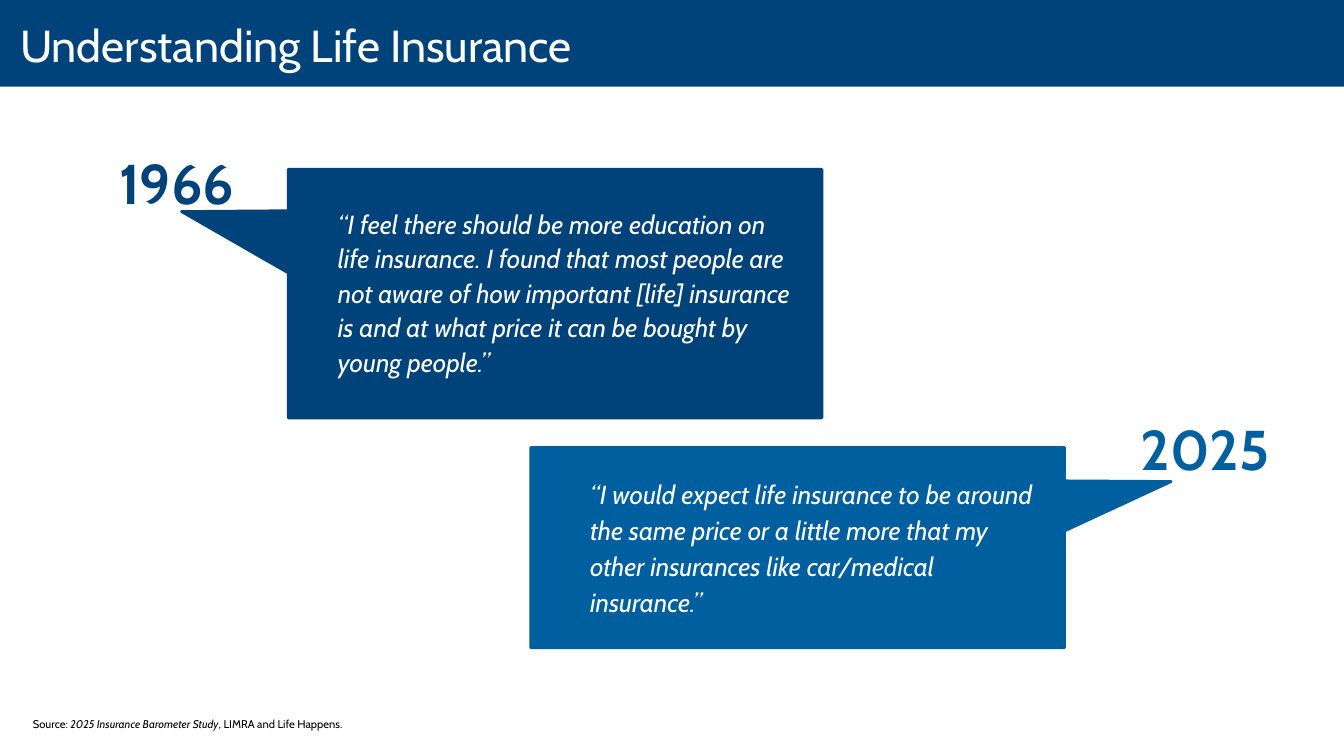
"""Build a slide that sets two quotes on life insurance, from 1966 and 2025, side by side."""
from pptx import Presentation
from pptx.dml.color import RGBColor
from pptx.enum.shapes import MSO_SHAPE
from pptx.enum.text import MSO_ANCHOR, PP_ALIGN
from pptx.util import Inches, Pt

RECT, CALL = MSO_SHAPE.RECTANGLE, MSO_SHAPE.RECTANGULAR_CALLOUT
TOP, MID = MSO_ANCHOR.TOP, MSO_ANCHOR.MIDDLE
LEFT, CENTER = PP_ALIGN.LEFT, PP_ALIGN.CENTER

THEME = {
    "font": "Cabin",
    "navy": RGBColor(0x00, 0x43, 0x7B),
    "blue": RGBColor(0x00, 0x5F, 0x9E),
    "white": RGBColor(0xFF, 0xFF, 0xFF),
    "black": RGBColor(0x00, 0x00, 0x00),
    "title": Pt(48),
    "year": Pt(60),
    "quote": Pt(28),
    "note": Pt(12),
    "edge": Pt(3),
}

deck = Presentation()
deck.slide_width, deck.slide_height = Inches(20), Inches(11.25)
COL, ROW = deck.slide_width / 100, deck.slide_height / 100
slide = deck.slides.add_slide(deck.slide_layouts[6])


def add_block(kind, box, hue):
    x, y, w, h = box
    block = slide.shapes.add_shape(kind, int(x * COL), int(y * ROW), int(w * COL), int(h * ROW))
    block.shadow.inherit = False
    block.fill.solid()
    block.fill.fore_color.rgb = THEME[hue]
    block.line.fill.background()
    return block


def add_text(box, runs, size, hue, bold=False, frame=None, para=None):
    x, y, w, h = box
    shape = slide.shapes.add_textbox(int(x * COL), int(y * ROW), int(w * COL), int(h * ROW))
    body = shape.text_frame
    line = body.paragraphs[0]
    for key, value in {"word_wrap": True, "vertical_anchor": TOP, **(frame or {})}.items():
        setattr(body, key, value)
    for key, value in {"alignment": LEFT, **(para or {})}.items():
        setattr(line, key, value)
    for text, slant in runs:
        run = line.add_run()
        run.text = text
        style = {"name": THEME["font"], "size": THEME[size], "bold": bold, "italic": slant}
        for key, value in style.items():
            setattr(run.font, key, value)
        run.font.color.rgb = THEME[hue]


add_block(RECT, (0, 0, 100, 11.47), "navy")
add_text(
    (0, 0, 100, 11.73), [("Understanding Life Insurance", False)], "title", "white",
    frame={"vertical_anchor": MID, "margin_left": Inches(0.3), "margin_right": Inches(0.2),
           "margin_top": 0, "margin_bottom": 0},
)

QUOTES = [
    {
        "year": "1966", "hue": "navy", "tip": -0.7,
        "call": (21.45, 22.4, 39.7, 32.89),
        "box": (24.65, 26.67, 34.7, 23.73),
        "label": (6.75, 19.11, 12.8, 9.87),
        "text": "“I feel there should be more education on life insurance. I found that most "
                "people are not aware of how important [life] insurance is and at what price "
                "it can be bought by young people.”",
        "frame": {},
        "para": {"line_spacing": 1.1, "space_after": Pt(6)},
    },
    {
        "year": "2025", "hue": "blue", "tip": 0.7,
        "call": (39.5, 59.2, 39.7, 26.49),
        "box": (40.9, 62.22, 36.95, 19.91),
        "label": (83.25, 54.31, 12.8, 9.87),
        "text": "“I would expect life insurance to be around the same price or a little more "
                "that my other insurances like car/medical insurance.”",
        "frame": {"margin_left": Inches(0.6)},
        "para": {"line_spacing": 1.15, "space_after": Pt(8)},
    },
]

for quote in QUOTES:
    hue = quote["hue"]
    call = add_block(CALL, quote["call"], hue)
    call.adjustments[0], call.adjustments[1] = quote["tip"], -0.33
    call.line.color.rgb = THEME[hue]
    call.line.width = THEME["edge"]
    add_text(quote["box"], [(quote["text"], True)], "quote", "white",
             frame=quote["frame"], para=quote["para"])
    add_text(quote["label"], [(quote["year"], False)], "year", hue, bold=True,
             frame={"vertical_anchor": MID}, para={"alignment": CENTER})

add_text(
    (1.95, 94.49, 68.35, 2.67),
    [("Source: ", False), ("2025 Insurance Barometer Study", True),
     (", LIMRA and Life Happens.", False)],
    "note", "black",
)

deck.save("out.pptx")
